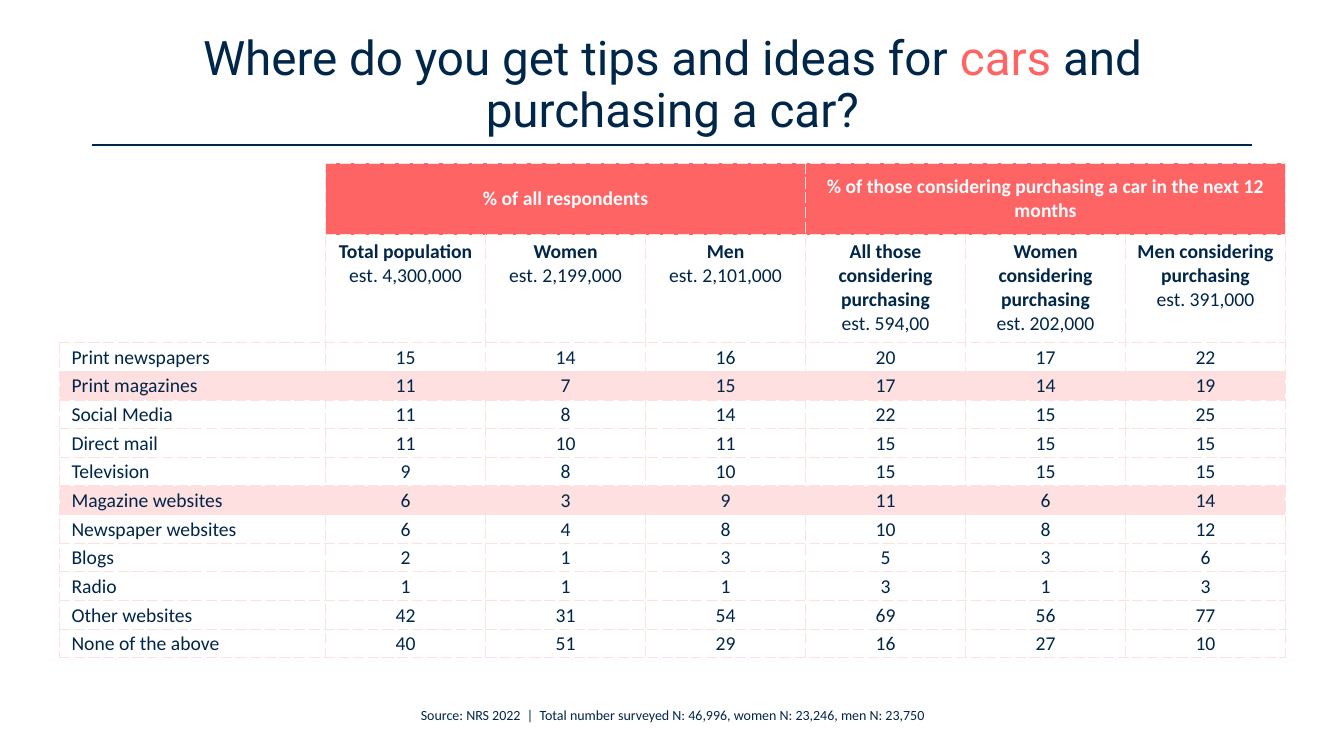
from lxml import etree
from pptx import Presentation
from pptx.dml.color import RGBColor
from pptx.enum import shapes, text
from pptx.oxml import ns
from pptx.util import Inches, Pt

COLORS = {"navy": "002649", "coral": "FF6464", "blush": "FFE0E0", "light": "FEFCFF", "white": "FFFFFF"}
GROUPS = ["% of all respondents", "% of those considering purchasing a car in the next 12 months"]
AUDIENCES = [
    ("Total population", "est. 4,300,000"),
    ("Women", "est. 2,199,000"),
    ("Men", "est. 2,101,000"),
    ("All those considering purchasing", "est. 594,00"),
    ("Women considering purchasing", "est. 202,000"),
    ("Men considering purchasing", "est. 391,000"),
]
SOURCES = [
    ("Print newspapers", 15, 14, 16, 20, 17, 22),
    ("Print magazines", 11, 7, 15, 17, 14, 19),
    ("Social Media", 11, 8, 14, 22, 15, 25),
    ("Direct mail", 11, 10, 11, 15, 15, 15),
    ("Television", 9, 8, 10, 15, 15, 15),
    ("Magazine websites", 6, 3, 9, 11, 6, 14),
    ("Newspaper websites", 6, 4, 8, 10, 8, 12),
    ("Blogs", 2, 1, 3, 5, 3, 6),
    ("Radio", 1, 1, 1, 3, 1, 3),
    ("Other websites", 42, 31, 54, 69, 56, 77),
    ("None of the above", 40, 51, 29, 16, 27, 10),
]
HIGHLIGHTED = {"Print magazines", "Magazine websites"}


def color(name):
    return RGBColor.from_string(COLORS[name])


def set_font(font, size, name="Calibri", ink="navy", bold=None):
    font.name, font.size, font.bold = name, Pt(size), bold
    font.color.rgb = color(ink)


def add_title(page, left, top, width, height):
    box = page.shapes.add_textbox(Inches(left), Inches(top), Inches(width), Inches(height))
    frame = box.text_frame
    frame.word_wrap = True
    frame.vertical_anchor = text.MSO_ANCHOR.MIDDLE
    para = frame.paragraphs[0]
    para.alignment = text.PP_ALIGN.CENTER
    para.line_spacing = 0.9
    for words, ink in [("Where do you get tips and ideas for ", "navy"), ("cars ", "coral"),
                       ("and purchasing a car?", "navy")]:
        span = para.add_run()
        span.text = words
        set_font(span.font, 34, "Roboto", ink)


def add_rule(page, left, top, width):
    rule = page.shapes.add_connector(shapes.MSO_CONNECTOR.STRAIGHT, Inches(left), Inches(top),
                                     Inches(left + width), Inches(top))
    rule.line.color.rgb = color("navy")
    rule.line.width = Pt(1)
    etree.SubElement(rule._element.spPr, ns.qn("a:effectLst"))


def style_cell(cell, fill=None, sides="LRTB"):
    """Draw the dashed borders on the given sides, then fill the cell."""
    properties = cell._tc.get_or_add_tcPr()
    for side in sides:
        border = etree.SubElement(properties, ns.qn(f"a:ln{side}"), w=str(Pt(1)))
        paint = etree.SubElement(border, ns.qn("a:solidFill"))
        etree.SubElement(paint, ns.qn("a:srgbClr"), val=COLORS["blush"])
        etree.SubElement(border, ns.qn("a:prstDash"), val="sysDash")
    if fill:
        cell.fill.solid()
        cell.fill.fore_color.rgb = color(fill)
    else:
        cell.fill.background()


def fill_group_header(table, column, words):
    cell = table.cell(0, column)
    cell.merge(table.cell(0, column + 2))
    style_cell(cell, "coral")
    cell.text = words
    cell.vertical_anchor = text.MSO_ANCHOR.MIDDLE
    para = cell.text_frame.paragraphs[0]
    para.alignment = text.PP_ALIGN.CENTER
    set_font(para.font, 14, ink="light", bold=True)


def fill_audience(cell, name, estimate):
    style_cell(cell)
    para = cell.text_frame.paragraphs[0]
    para.alignment = text.PP_ALIGN.CENTER
    set_font(para.font, 14)
    heading = para.add_run()
    heading.text = name
    heading.font.bold = True
    para.add_line_break()
    count = para.add_run()
    count.text = estimate
    count.font.bold = False


def fill_value(cell, value, is_label, fill):
    style_cell(cell, fill)
    cell.text = str(value)
    cell.vertical_anchor = text.MSO_ANCHOR.MIDDLE
    cell.margin_left = Inches(0.12 if is_label else 0.01)
    cell.margin_top = cell.margin_right = Inches(0.01)
    cell.margin_bottom = 0
    para = cell.text_frame.paragraphs[0]
    para.alignment = text.PP_ALIGN.LEFT if is_label else text.PP_ALIGN.CENTER
    set_font(para.font, 14)


def add_survey_table(page, left, top, width, height):
    label_width, group_height, audience_height = 2.64, 0.71, 1.07
    frame = page.shapes.add_table(len(SOURCES) + 2, len(AUDIENCES) + 1, Inches(left), Inches(top),
                                  Inches(width), Inches(height))
    table = frame.table
    table.first_row = table.horz_banding = False
    value_width = (width - label_width) / len(AUDIENCES)
    value_height = (height - group_height - audience_height) / len(SOURCES)
    for index, column in enumerate(table.columns):
        column.width = Inches(value_width if index else label_width)
    for row, size in zip(table.rows, [group_height, audience_height] + [value_height] * len(SOURCES)):
        row.height = Inches(size)

    corner = table.cell(0, 0)
    corner.merge(table.cell(1, 0))
    style_cell(corner, "white", sides="RB")
    for index, words in enumerate(GROUPS):
        fill_group_header(table, 1 + 3 * index, words)
    for column, audience in enumerate(AUDIENCES, 1):
        fill_audience(table.cell(1, column), *audience)
    for row, values in enumerate(SOURCES, 2):
        fill = "blush" if values[0] in HIGHLIGHTED else None
        for column, value in enumerate(values):
            fill_value(table.cell(row, column), value, column == 0, fill)


def add_source_note(page, left, top, width, height):
    box = page.shapes.add_textbox(Inches(left), Inches(top), Inches(width), Inches(height))
    box.text_frame.word_wrap = False
    para = box.text_frame.paragraphs[0]
    para.text = "Source: NRS 2022  |  Total number surveyed N: 46,996, women N: 23,246, men N: 23,750"
    para.alignment = text.PP_ALIGN.CENTER
    set_font(para.font, 10)


def main():
    deck = Presentation()
    deck.slide_width, deck.slide_height = Inches(13.33), Inches(7.5)
    page = deck.slides.add_slide(deck.slide_layouts[6])
    add_title(page, 0.92, 0.32, 11.5, 1.07)
    add_survey_table(page, 0.59, 1.62, 12.16, 4.91)
    add_rule(page, 0.91, 1.44, 11.51)
    add_source_note(page, 3.82, 6.96, 5.7, 0.27)
    deck.save("out.pptx")


if __name__ == "__main__":
    main()
